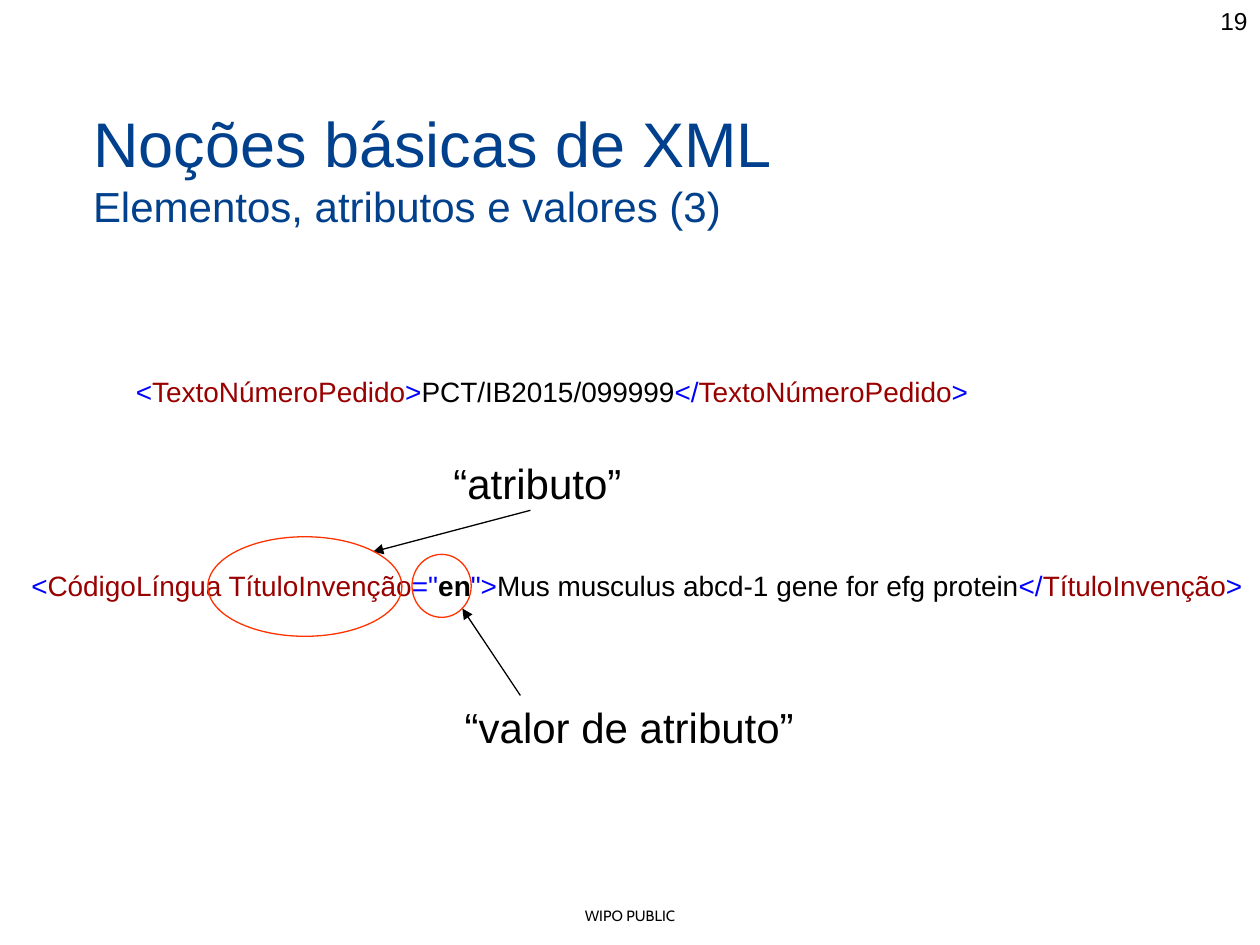
import pptx
import pptx.util
import pptx.dml.color
import pptx.enum.shapes
import pptx.enum.text
import pptx.oxml.ns
import lxml.etree
from pptx.util import Inches

COLORS = {"text": "000000", "title": "00408C", "mark": "0000FF",
          "name": "990000", "ring": "FF3300"}
ALIGN = pptx.enum.text.PP_ALIGN


def rgb(color):
    return pptx.dml.color.RGBColor.from_string(COLORS[color])


class SlideBuilder:
    """Holds the style and the current slide."""

    def __init__(self, slide, font="Arial", line_width=0.75):
        self.slide = slide
        self.font = font
        self.line_width = pptx.util.Pt(line_width)

    def text(self, box, paragraphs, align=ALIGN.LEFT, wrap=True,
             font=None, top_inset=0.05):
        """Each paragraph is (size, runs); each run is (text, color[, bold])."""
        shape = self.slide.shapes.add_textbox(*map(Inches, box))
        frame = shape.text_frame
        frame.word_wrap = wrap
        frame.margin_top = Inches(top_inset)
        for index, (size, runs) in enumerate(paragraphs):
            paragraph = frame.add_paragraph() if index else frame.paragraphs[0]
            paragraph.alignment = align
            for content, color, *bold in runs:
                run = paragraph.add_run()
                run.text = content
                run.font.name = font or self.font
                run.font.size = pptx.util.Pt(size)
                run.font.bold = bool(bold)
                run.font.color.rgb = rgb(color)

    def ring(self, box):
        shape = self.slide.shapes.add_shape(
            pptx.enum.shapes.MSO_SHAPE.OVAL, *map(Inches, box))
        shape.shadow.inherit = False
        shape.fill.background()
        shape.line.color.rgb = rgb("ring")
        shape.line.width = self.line_width

    def arrow(self, start, end):
        connector = self.slide.shapes.add_connector(
            pptx.enum.shapes.MSO_CONNECTOR.STRAIGHT,
            *map(Inches, start + end))
        connector.line.color.rgb = rgb("text")
        connector.line.width = self.line_width
        qualified = pptx.oxml.ns.qn
        lxml.etree.SubElement(connector.line._get_or_add_ln(),
                              qualified("a:tailEnd"), type="triangle")
        lxml.etree.SubElement(connector._element.spPr,
                              qualified("a:effectLst"))


def main():
    presentation = pptx.Presentation()
    presentation.slide_width = Inches(10)
    presentation.slide_height = Inches(7.5)
    builder = SlideBuilder(
        presentation.slides.add_slide(presentation.slide_layouts[6]))

    # Footer and page number
    builder.text((0, 7.15, 10, 0.24), [(8.5, [("WIPO PUBLIC", "text")])],
                 align=ALIGN.CENTER, font="Cabin")
    builder.text((7.67, 0, 2.33, 0.52), [(14, [("19", "text")])],
                 align=ALIGN.RIGHT)

    # Title and subtitle
    builder.text((0.64, 0.72, 9, 1.25), [
        (36, [("Noções básicas de XML", "title")]),
        (24, [("Elementos, atributos e valores (3)", "title")]),
    ], top_inset=0.11)

    # XML elements
    builder.text((0.98, 2.92, 6.88, 0.37), [(16, [
        ("<", "mark"), ("TextoNúmeroPedido", "name"), (">", "mark"),
        ("PCT/IB2015/099999", "text"),
        ("</", "mark"), ("TextoNúmeroPedido", "name"), (">", "mark"),
    ])], wrap=False)
    builder.text((0.15, 4.46, 10.16, 0.37), [(16, [
        ("<", "mark"), ("CódigoLíngua TítuloInvenção", "name"),
        ('="', "mark"), ("en", "text", True), ('">', "mark"),
        ("Mus musculus abcd-1 gene for efg protein", "text"),
        ("</", "mark"), ("TítuloInvenção", "name"), (">", "mark"),
    ])], wrap=False)

    # Callouts: label, arrow and ring
    callouts = [
        ("“atributo”", (3.5, 3.58, 1.55, 0.5),
         (4.21, 4.05), (2.96, 4.38), (1.65, 4.26, 1.54, 0.79)),
        ("“valor de atributo”", (3.59, 5.52, 2.84, 0.5),
         (4.13, 5.52), (3.67, 4.83), (3.27, 4.4, 0.47, 0.5)),
    ]
    for label, label_box, start, end, ring_box in callouts:
        builder.text(label_box, [(24, [(label, "text")])], wrap=False)
        builder.arrow(start, end)
        builder.ring(ring_box)

    presentation.save("out.pptx")


if __name__ == "__main__":
    main()
